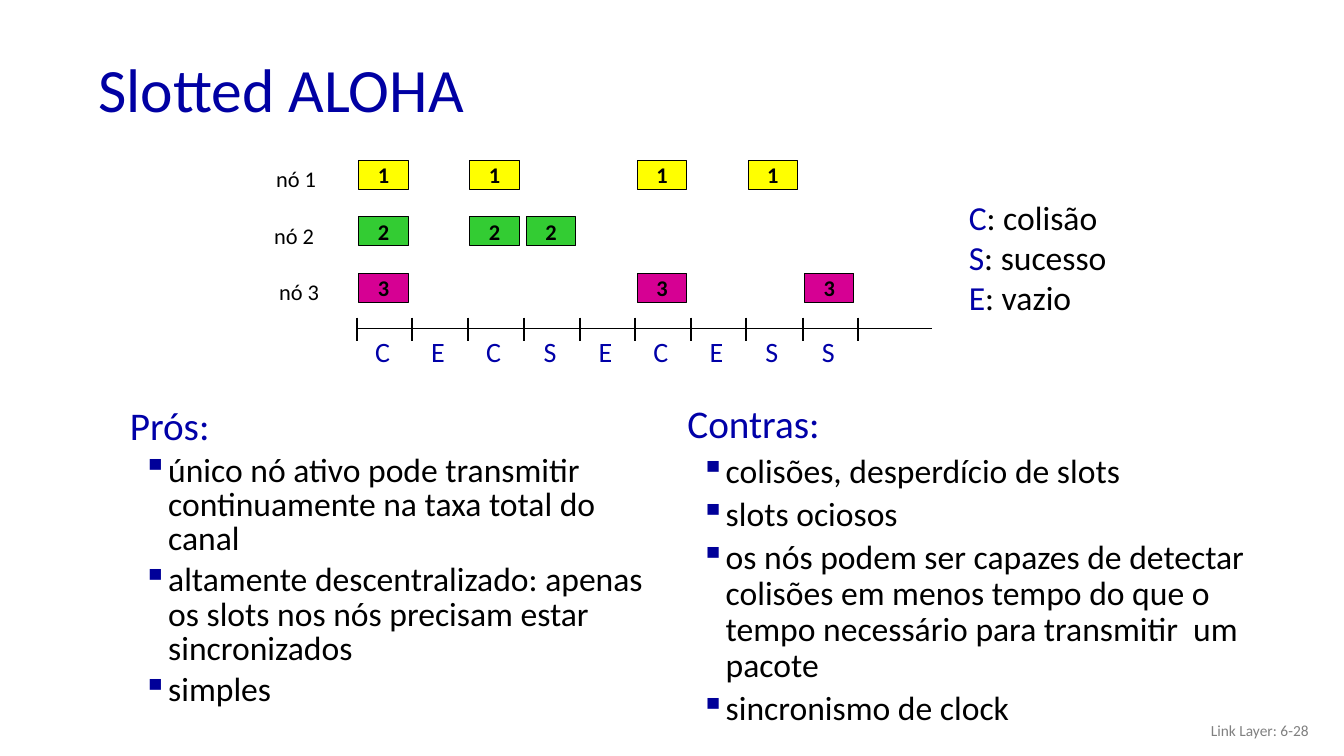
from lxml import etree
from pptx import Presentation
from pptx.dml.color import RGBColor
from pptx.enum.shapes import MSO_CONNECTOR, MSO_SHAPE
from pptx.enum.text import MSO_ANCHOR, PP_ALIGN
from pptx.oxml.ns import qn
from pptx.util import Emu, Pt

RECT = MSO_SHAPE.RECTANGLE
STRAIGHT = MSO_CONNECTOR.STRAIGHT
TOP, MIDDLE = MSO_ANCHOR.TOP, MSO_ANCHOR.MIDDLE
LEFT, CENTER, RIGHT = PP_ALIGN.LEFT, PP_ALIGN.CENTER, PP_ALIGN.RIGHT

PX = 9144
FONT = "Calibri"
TITLE_BLUE, BLUE, BULLET_BLUE = "0000A3", "0000A8", "000099"
BLACK, GRAY = "000000", "808080"

AXIS_LEFT, AXIS_RIGHT, AXIS_Y = 354, 924, 326
SLOT_WIDTH = 55.2
ROW_TOP, ROW_PITCH = 159, 56
OUTCOMES = "CECSECESS"
NODES = [
    ("1", 264, "FFFF00", [0, 2, 5, 7]),
    ("2", 262, "33CC33", [0, 2, 3]),
    ("3", 267, "D60093", [0, 5, 8]),
]
LEGEND = [("C", "colisão"), ("S", "sucesso"), ("E", "vazio")]
PROS = [
    "único nó ativo pode transmitir continuamente na taxa total do canal",
    "altamente descentralizado: apenas os slots nos nós precisam estar sincronizados",
    "simples",
]
CONS = [
    "colisões, desperdício de slots",
    "slots ociosos",
    "os nós podem ser capazes de detectar colisões em menos tempo do que o "
    "tempo necessário para transmitir  um pacote",
    "sincronismo de clock",
]


def px(n):
    return Emu(n * PX)


def rgb(value):
    return RGBColor.from_string(value)


def slot_x(i):
    return round(AXIS_LEFT + i * SLOT_WIDTH)


def add_text(p, text, size=16, color=BLACK, bold=False):
    r = p.add_run()
    r.text = text
    r.font.name = FONT
    r.font.size = Pt(size)
    r.font.bold = bold
    r.font.color.rgb = rgb(color)


class SlideBuilder:
    """Draws styled elements on one slide."""

    def __init__(self, prs):
        self.shapes = prs.slides.add_slide(prs.slide_layouts[6]).shapes

    def frame(self, x, y, w, h, anchor=TOP, wrap=True):
        tf = self.shapes.add_textbox(px(x), px(y), px(w), px(h)).text_frame
        tf.word_wrap = wrap
        tf.vertical_anchor = anchor
        return tf

    def label(self, text, x, y, w, h, align=LEFT, anchor=TOP, wrap=False, **style):
        p = self.frame(x, y, w, h, anchor, wrap).paragraphs[0]
        p.alignment = align
        add_text(p, text, **style)

    def packet(self, text, x, y, fill):
        sp = self.shapes.add_shape(RECT, px(x), px(y), px(49), px(29))
        sp.shadow.inherit = False
        sp.fill.solid()
        sp.fill.fore_color.rgb = rgb(fill)
        sp.line.color.rgb = rgb(BLACK)
        sp.line.width = Pt(0.75)
        tf = sp.text_frame
        tf.margin_left = tf.margin_right = tf.margin_top = tf.margin_bottom = 0
        tf.vertical_anchor = MIDDLE
        p = tf.paragraphs[0]
        p.alignment = CENTER
        add_text(p, text, bold=True)

    def line(self, x1, y1, x2, y2, width):
        cn = self.shapes.add_connector(STRAIGHT, px(x1), px(y1), px(x2), px(y2))
        cn.line.color.rgb = rgb(BLACK)
        cn.line.width = Pt(width)
        etree.SubElement(cn._element.spPr, qn("a:effectLst"))

    def bullets(self, heading, items, x, y, w, h, spacing):
        tf = self.frame(x, y, w, h)
        p = tf.paragraphs[0]
        p.line_spacing = spacing
        add_text(p, heading, size=28, color=BLUE)
        for item in items:
            p = tf.add_paragraph()
            p.line_spacing = spacing
            p.space_before = Pt(4.8)
            pPr = p._p.get_or_add_pPr()
            pPr.set("marL", str(px(38)))
            pPr.set("indent", str(px(-25)))
            clr = etree.SubElement(pPr, qn("a:buClr"))
            etree.SubElement(clr, qn("a:srgbClr"), val=BULLET_BLUE)
            etree.SubElement(pPr, qn("a:buChar"), char="▪")
            add_text(p, item, size=24)

    def legend(self, entries, x, y, w, h):
        tf = self.frame(x, y, w, h, wrap=False)
        for i, (key, meaning) in enumerate(entries):
            p = tf.add_paragraph() if i else tf.paragraphs[0]
            add_text(p, key, size=24, color=BLUE)
            add_text(p, f": {meaning}", size=24)


def main():
    prs = Presentation()
    prs.slide_width, prs.slide_height = px(1333), px(750)
    s = SlideBuilder(prs)

    s.label("Slotted ALOHA", 88, 38, 1150, 98, anchor=MIDDLE, wrap=True,
            size=44, color=TITLE_BLUE)
    s.label("Link Layer: 6-28", 1008, 705, 300, 40, align=RIGHT, anchor=MIDDLE,
            wrap=True, size=11, color=GRAY)
    s.bullets("Prós:", PROS, 119, 400, 530, 350, 0.85)
    s.bullets("Contras:", CONS, 672, 397, 610, 300, 0.9)

    for row, (node, label_x, fill, slots) in enumerate(NODES):
        y = ROW_TOP + row * ROW_PITCH
        s.label(f"nó {node}", label_x, y, 60, 37)
        for slot in slots:
            s.packet(node, slot_x(slot) + 2, y, fill)

    s.line(AXIS_LEFT, AXIS_Y, AXIS_RIGHT, AXIS_Y, 0.75)
    for i in range(len(OUTCOMES) + 1):
        s.line(slot_x(i), AXIS_Y - 11, slot_x(i), AXIS_Y + 12, 1.5)
    for i, outcome in enumerate(OUTCOMES):
        s.label(outcome, slot_x(i) + 8, 327, 35, 44, align=CENTER,
                size=20, color=BLUE)

    s.legend(LEGEND, 951, 190, 158, 131)
    prs.save("out.pptx")


if __name__ == "__main__":
    main()
